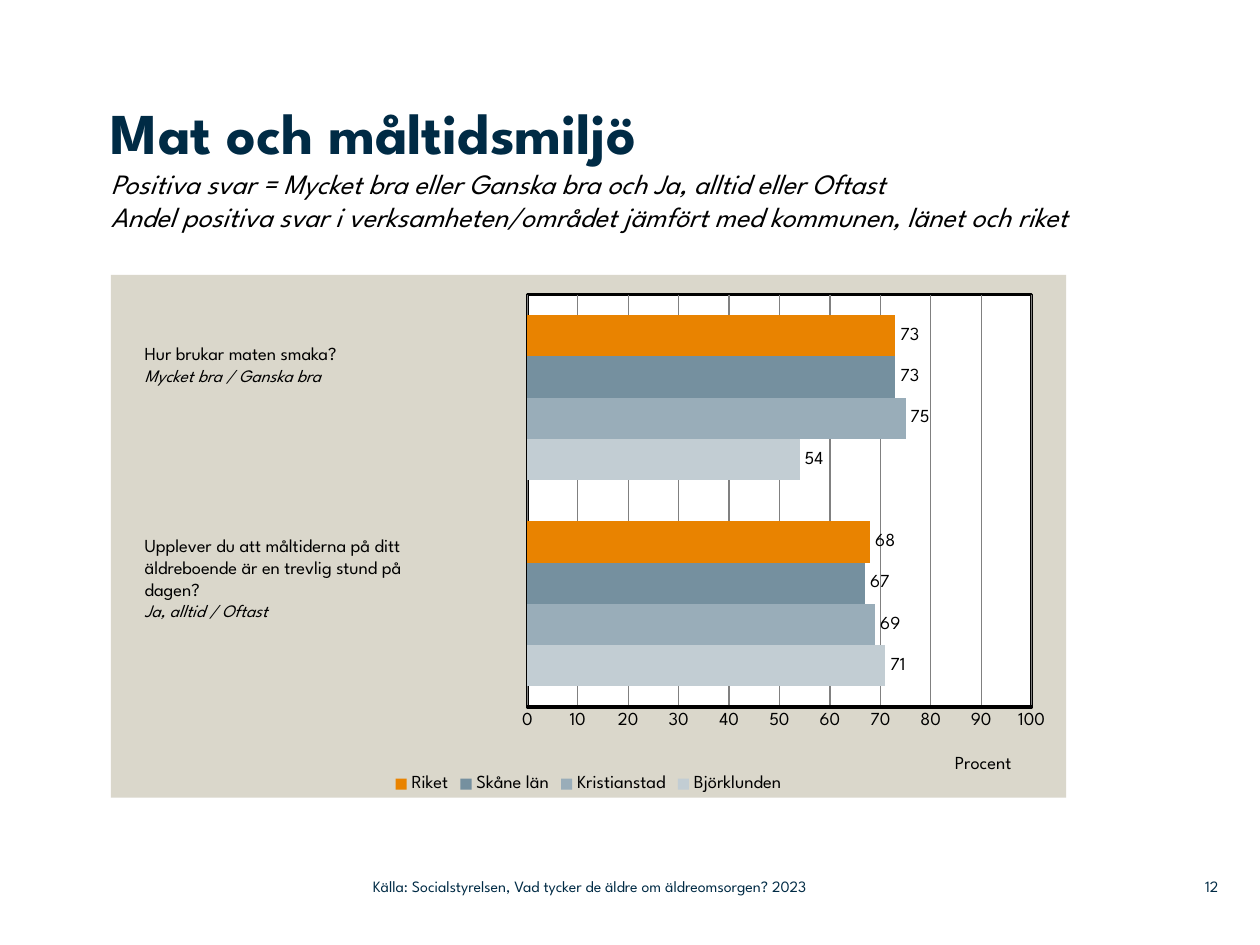
from dataclasses import dataclass

from lxml.etree import fromstring
from pptx import Presentation
from pptx.chart.data import CategoryChartData
from pptx.dml.color import RGBColor
from pptx.enum.chart import XL_CHART_TYPE, XL_LABEL_POSITION, XL_LEGEND_POSITION, XL_TICK_MARK
from pptx.enum.text import MSO_ANCHOR, PP_ALIGN
from pptx.oxml.ns import nsdecls, qn
from pptx.util import Pt


@dataclass(frozen=True)
class Theme:
    font: str = "League Spartan"
    navy: str = "002B45"
    black: str = "000000"
    white: str = "FFFFFF"
    panel: str = "DAD7CB"
    grid: str = "808080"
    title_size: float = 33
    subtitle_size: float = 16
    body_size: float = 10.5
    answer_size: float = 10
    footer_size: float = 9


THEME = Theme()

SERIES = [
    ("Björklunden", (71, 54), "C2CDD3"),
    ("Kristianstad", (69, 75), "99ADB9"),
    ("Skåne län", (67, 73), "75909F"),
    ("Riket", (68, 73), "E98300"),
]

QUESTIONS = [
    (192.2, 45.4, ["Hur brukar maten smaka?"], "Mycket bra / Ganska bra"),
    (301.7, 70.6,
     ["Upplever du att måltiderna på ditt äldreboende är en trevlig stund på", "dagen?"],
     "Ja, alltid / Oftast"),
]


def style_font(font, size, color, bold=False, italic=False):
    font.name = THEME.font
    font.size = Pt(size)
    font.bold = bold
    font.italic = italic
    font.color.rgb = RGBColor.from_string(color)


def add_run(paragraph, text, size, color=THEME.black, bold=False, italic=False):
    run = paragraph.add_run()
    run.text = text
    style_font(run.font, size, color, bold, italic)


def add_text_box(slide, left, top, width, height, margins=None, anchor=MSO_ANCHOR.TOP):
    shape = slide.shapes.add_textbox(Pt(left), Pt(top), Pt(width), Pt(height))
    frame = shape.text_frame
    frame.word_wrap = True
    frame.vertical_anchor = anchor
    if margins is not None:
        frame.margin_left = frame.margin_right = frame.margin_bottom = Pt(0)
        frame.margin_top = Pt(margins)
    return frame


def add_heading(slide):
    paragraph = add_text_box(slide, 63.4, 53.3, 606.2, 103.7, margins=2).paragraphs[0]
    add_run(paragraph, "Mat och måltidsmiljö", THEME.title_size, THEME.navy, bold=True)
    for line in (
        "Positiva svar = Mycket bra eller Ganska bra och Ja, alltid eller Oftast",
        "Andel positiva svar i verksamheten/området jämfört med kommunen, länet och riket",
    ):
        paragraph.add_line_break()
        add_run(paragraph, line, THEME.subtitle_size, italic=True)


def add_question(slide, top, height, lines, answer):
    frame = add_text_box(slide, 75.6, top, 199.4, height)
    paragraph = frame.paragraphs[0]
    for line in lines:
        add_run(paragraph, line, THEME.body_size)
        paragraph = frame.add_paragraph()
    add_run(paragraph, answer, THEME.answer_size, italic=True)


def add_footer(slide, left, width, text, alignment):
    frame = add_text_box(slide, left, 496.1, width, 20.9, margins=0, anchor=MSO_ANCHOR.MIDDLE)
    paragraph = frame.paragraphs[0]
    paragraph.alignment = alignment
    add_run(paragraph, text, THEME.footer_size, THEME.navy)


def area_properties(fill, line="<a:ln><a:noFill/></a:ln>"):
    return fromstring(
        f'<c:spPr {nsdecls("c", "a")}><a:solidFill><a:srgbClr val="{fill}"/></a:solidFill>'
        f"{line}</c:spPr>"
    )


def set_layout(parent, index, target="", **values):
    existing = parent.find(qn("c:layout"))
    if existing is not None:
        parent.remove(existing)
    modes = "".join(f'<c:{name}Mode val="edge"/>' for name in ("x", "y"))
    numbers = "".join(f'<c:{name} val="{value}"/>' for name, value in values.items())
    parent.insert(index, fromstring(
        f'<c:layout {nsdecls("c")}><c:manualLayout>{target}{modes}{numbers}'
        "</c:manualLayout></c:layout>"
    ))


def style_value_axis(axis):
    axis.minimum_scale = 0
    axis.maximum_scale = 100
    axis.major_unit = 10
    axis.major_tick_mark = XL_TICK_MARK.NONE
    axis.minor_tick_mark = XL_TICK_MARK.NONE
    axis.format.line.color.rgb = RGBColor.from_string(THEME.black)
    axis.format.line.width = Pt(2)
    style_font(axis.tick_labels.font, THEME.body_size, THEME.black)
    axis.has_major_gridlines = True
    grid_line = axis.major_gridlines.format.line
    grid_line.color.rgb = RGBColor.from_string(THEME.grid)
    grid_line.width = Pt(0.75)
    axis.has_title = True
    title = axis.axis_title
    add_run(title.text_frame.paragraphs[0], "Procent", THEME.body_size)
    set_layout(title._element, 1, x=0.88, y=0.91)


def style_areas(chart):
    chart_space = chart._chartSpace
    chart_space.chart.addnext(area_properties(THEME.panel))
    plot_area = chart_space.chart.plotArea
    set_layout(plot_area, 0, '<c:layoutTarget val="inner"/>', x=0.436, y=0.038, w=0.528, h=0.789)
    border = (
        f'<a:ln w="{Pt(2)}"><a:solidFill><a:srgbClr val="{THEME.black}"/></a:solidFill></a:ln>'
    )
    plot_area.append(area_properties(THEME.white, border))


def add_answer_chart(slide):
    data = CategoryChartData()
    data.categories = ["1", "2"]
    for name, values, _ in SERIES:
        data.add_series(name, values)
    chart = slide.shapes.add_chart(
        XL_CHART_TYPE.BAR_CLUSTERED, Pt(63.4), Pt(157), Pt(545.8), Pt(298.8), data
    ).chart
    style_font(chart.font, THEME.body_size, THEME.black)
    chart.has_title = False
    chart.has_legend = True
    chart.legend.position = XL_LEGEND_POSITION.BOTTOM
    chart.legend.include_in_layout = False
    style_font(chart.legend.font, THEME.body_size, THEME.black)
    chart.category_axis.visible = False
    style_value_axis(chart.value_axis)
    plot = chart.plots[0]
    plot.gap_width = 100
    plot.overlap = 0
    plot.vary_by_categories = False
    for series, (_, _, color) in zip(plot.series, SERIES):
        series.format.fill.solid()
        series.format.fill.fore_color.rgb = RGBColor.from_string(color)
        labels = series.data_labels
        labels.show_value = True
        labels.position = XL_LABEL_POSITION.OUTSIDE_END
        style_font(labels.font, THEME.body_size, THEME.black)
    style_areas(chart)


def main():
    presentation = Presentation()
    presentation.slide_width = Pt(720)
    presentation.slide_height = Pt(540)
    slide = presentation.slides.add_slide(presentation.slide_layouts[6])
    add_answer_chart(slide)
    add_heading(slide)
    for question in QUESTIONS:
        add_question(slide, *question)
    add_footer(slide, 662.4, 33.8, "12", PP_ALIGN.RIGHT)
    add_footer(
        slide, 213.1, 319,
        "Källa: Socialstyrelsen, Vad tycker de äldre om äldreomsorgen? 2023", PP_ALIGN.LEFT,
    )
    presentation.save("out.pptx")


if __name__ == "__main__":
    main()
